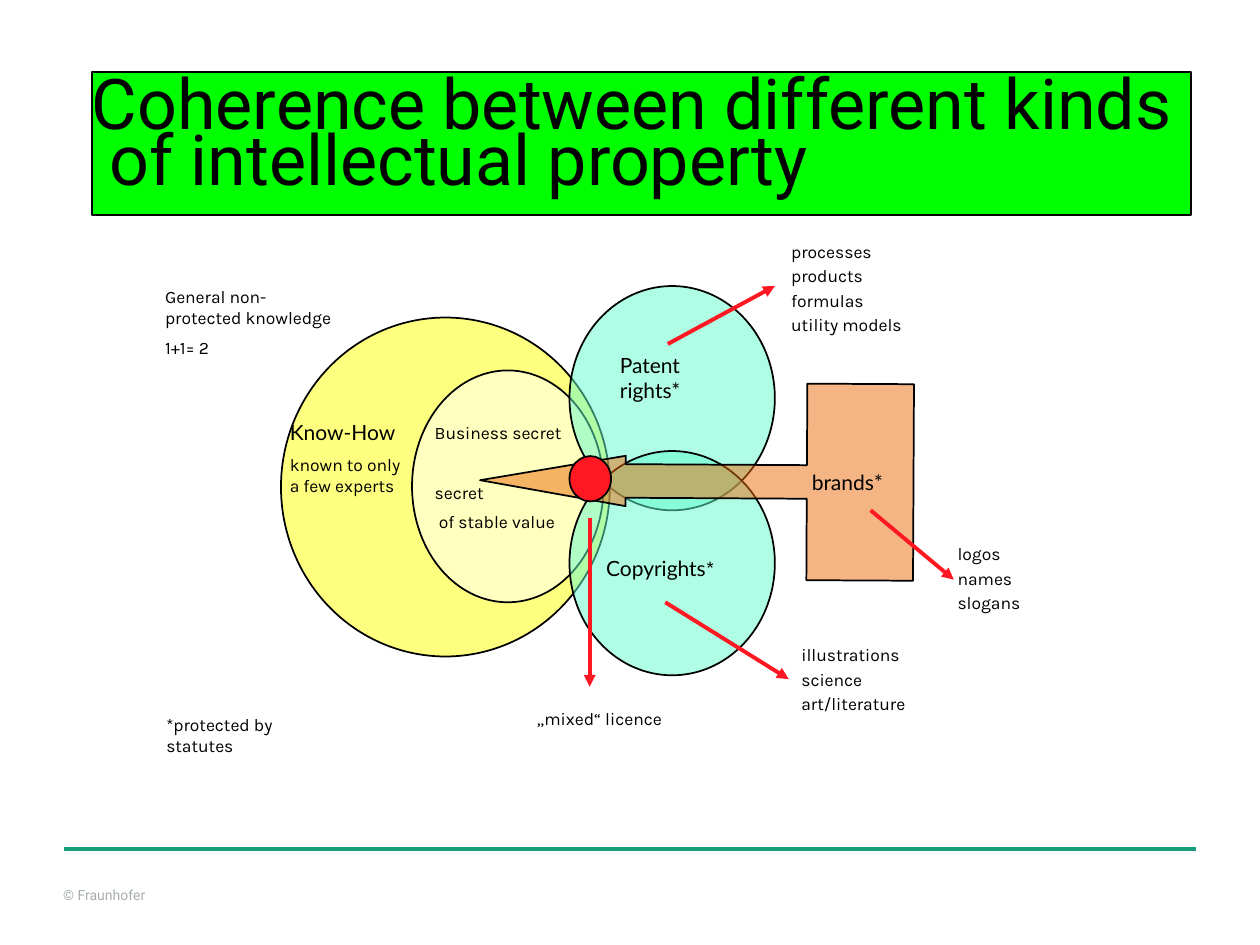
from dataclasses import dataclass

from lxml.etree import SubElement
from pptx import Presentation
from pptx.dml.color import RGBColor
from pptx.enum.shapes import MSO_CONNECTOR as Connector, MSO_SHAPE as Shape
from pptx.enum.text import MSO_ANCHOR as Anchor, MSO_AUTO_SIZE as AutoSize, PP_ALIGN as Align
from pptx.oxml.ns import qn
from pptx.util import Inches, Pt


@dataclass(frozen=True)
class Theme:
    black: str = "000000"
    grey: str = "A8AFAF"
    teal: str = "179C7D"
    green: str = "00FF00"
    yellow: str = "FFFF00"
    white: str = "FFFFFF"
    mint: str = "62FCCC"
    orange: str = "EB6A0A"
    red: str = "FF1721"
    title_font: str = "Roboto"
    heading_font: str = "Lato"
    body_font: str = "Karla"
    title_size: int = 40
    title_leading: int = 32
    heading_size: int = 12
    body_size: int = 10
    footer_size: int = 8
    paragraph_gap: int = 5
    outline: float = 1
    frame: float = 1.25
    arrow: float = 2.25
    rule: float = 2.5


class SlideBuilder:
    def __init__(self, slide, theme):
        self.slide = slide
        self.theme = theme

    def add_run(self, paragraph, text, font, size, color=None):
        run = paragraph.add_run()
        run.text = text
        run.font.name = font
        run.font.size = Pt(size)
        run.font.color.rgb = RGBColor.from_string(color or self.theme.black)

    def heading(self, paragraph, text):
        self.add_run(paragraph, text, self.theme.heading_font, self.theme.heading_size)

    def body(self, paragraph, text):
        self.add_run(paragraph, text, self.theme.body_font, self.theme.body_size)

    def set_margins(self, frame, horizontal, vertical):
        frame.margin_left = frame.margin_right = Inches(horizontal)
        frame.margin_top = frame.margin_bottom = Inches(vertical)

    def shape(self, kind, box, fill=None, opacity=100, line_width=None):
        shape = self.slide.shapes.add_shape(kind, *map(Inches, box))
        shape.shadow.inherit = False
        if fill:
            shape.fill.solid()
            shape.fill.fore_color.rgb = RGBColor.from_string(fill)
            if opacity < 100:
                color = shape.element.spPr.find(f"{qn('a:solidFill')}/{qn('a:srgbClr')}")
                SubElement(color, qn("a:alpha")).set("val", str(opacity * 1000))
        else:
            shape.fill.background()
        if line_width:
            shape.line.color.rgb = RGBColor.from_string(self.theme.black)
            shape.line.width = Pt(line_width)
        else:
            shape.line.fill.background()
        return shape

    def ellipse(self, box, fill, opacity=50):
        return self.shape(Shape.OVAL, box, fill, opacity, self.theme.outline)

    def title(self, box, lines):
        shape = self.shape(Shape.RECTANGLE, box, self.theme.green)
        frame = shape.text_frame
        frame.word_wrap = True
        frame.vertical_anchor = Anchor.MIDDLE
        self.set_margins(frame, 0, 0)
        paragraph = frame.paragraphs[0]
        paragraph.alignment = Align.LEFT
        paragraph.line_spacing = Pt(self.theme.title_leading)
        for index, line in enumerate(lines):
            if index:
                paragraph.add_line_break()
            self.add_run(paragraph, line, self.theme.title_font, self.theme.title_size)

    def brand_arrow(self, box, text):
        shape = self.shape(Shape.UP_ARROW_CALLOUT, box, self.theme.orange, 50, self.theme.outline)
        shape.rotation = 270.3
        for index, value in enumerate((0.171, 0.128, 0.741, 0.246)):
            shape.adjustments[index] = value
        frame = shape.text_frame
        frame.word_wrap = False
        frame.vertical_anchor = Anchor.MIDDLE
        self.set_margins(frame, 0.07, 0.04)
        shape.element.txBody.bodyPr.set("vert", "eaVert")
        frame.paragraphs[0].alignment = Align.LEFT
        self.heading(frame.paragraphs[0], text)

    def text_box(self, box, margins=(0.07, 0.04)):
        frame = self.slide.shapes.add_textbox(*map(Inches, box)).text_frame
        frame.word_wrap = True
        frame.auto_size = AutoSize.SHAPE_TO_FIT_TEXT
        self.set_margins(frame, *margins)
        return frame

    def next_paragraph(self, frame, gap=None):
        paragraph = frame.add_paragraph()
        paragraph.space_before = Pt(gap or self.theme.paragraph_gap)
        return paragraph

    def note(self, box, lines, line_spacing=None):
        frame = self.text_box(box)
        for index, line in enumerate(lines):
            paragraph = self.next_paragraph(frame) if index else frame.paragraphs[0]
            if line_spacing:
                paragraph.line_spacing = line_spacing
            self.body(paragraph, line)
        return frame

    def label(self, box, text):
        frame = self.text_box(box)
        self.heading(frame.paragraphs[0], text)
        return frame

    def footer(self, box, text):
        frame = self.text_box(box, (0, 0))
        theme = self.theme
        self.add_run(frame.paragraphs[0], text, theme.title_font, theme.footer_size, theme.grey)

    def line(self, start, end, color, width):
        connector = self.slide.shapes.add_connector(
            Connector.STRAIGHT, *map(Inches, (*start, *end)))
        connector.line.color.rgb = RGBColor.from_string(color)
        connector.line.width = Pt(width)
        SubElement(connector.element.spPr, qn("a:effectLst"))
        return connector

    def arrow(self, start, end):
        connector = self.line(start, end, self.theme.red, self.theme.arrow)
        outline = connector.element.spPr.find(qn("a:ln"))
        SubElement(outline, qn("a:tailEnd")).set("type", "triangle")


def main():
    presentation = Presentation()
    presentation.slide_width, presentation.slide_height = Inches(10), Inches(7.5)
    slide = presentation.slides.add_slide(presentation.slide_layouts[6])
    theme = Theme()
    builder = SlideBuilder(slide, theme)

    builder.footer((0.5, 7.04, 0.98, 0.13), "© Fraunhofer")
    builder.line((0.51, 6.74), (9.49, 6.74), theme.teal, theme.rule)
    title_box = (0.73, 0.57, 8.72, 1.14)
    builder.title(title_box, ("Coherence between different kinds", " of intellectual property"))

    builder.ellipse((2.23, 2.52, 2.61, 2.69), theme.yellow)
    builder.ellipse((3.27, 2.94, 1.52, 1.84), theme.white)
    for top in (2.27, 3.58):
        builder.ellipse((4.52, top, 1.63, 1.78), theme.mint)
    builder.brand_arrow((4.75, 2.1, 1.56, 3.44), "brands*")
    builder.ellipse((4.52, 3.62, 0.33, 0.36), theme.red, 100)

    builder.note((1.24, 2.23, 1.47, 0.83), ("General non-protected knowledge", "1+1= 2"))
    builder.note((1.25, 5.63, 1.36, 0.41), ("*protected by statutes",))
    know_how = builder.label((2.23, 3.29, 1.09, 0.69), "Know-How")
    builder.body(builder.next_paragraph(know_how), "known to only a few experts")
    secret = builder.note((3.38, 3.31, 1.42, 0.99), ("Business secret",))
    builder.body(builder.next_paragraph(secret, 22), "secret")
    builder.body(builder.next_paragraph(secret), " of stable value")
    builder.label((4.85, 2.76, 1.04, 0.47), "Patent rights*")
    copyrights = builder.label((4.74, 4.37, 1.51, 0.27), "Copyrights")
    builder.add_run(copyrights.paragraphs[0], "*", theme.body_font, theme.heading_size)
    builder.note((4.19, 5.58, 1.58, 0.24), ("„mixed“ licence",))

    examples = (
        ((6.21, 1.91, 2.26, 0.82), ("processes", "products", "formulas", "utility models")),
        ((7.53, 4.31, 1.25, 0.61), ("logos", "names", "slogans")),
        ((6.29, 5.11, 1.38, 0.61), ("illustrations", "science", "art/literature")),
    )
    for box, lines in examples:
        builder.note(box, lines, 0.75)

    arrows = (
        ((4.68, 4.11), (4.68, 5.45)),
        ((5.3, 2.73), (6.15, 2.27)),
        ((6.91, 4.05), (7.57, 4.6)),
        ((5.28, 4.78), (6.26, 5.39)),
    )
    for start, end in arrows:
        builder.arrow(start, end)
    builder.shape(Shape.RECTANGLE, title_box, line_width=theme.frame)

    presentation.save("out.pptx")


if __name__ == "__main__":
    main()
